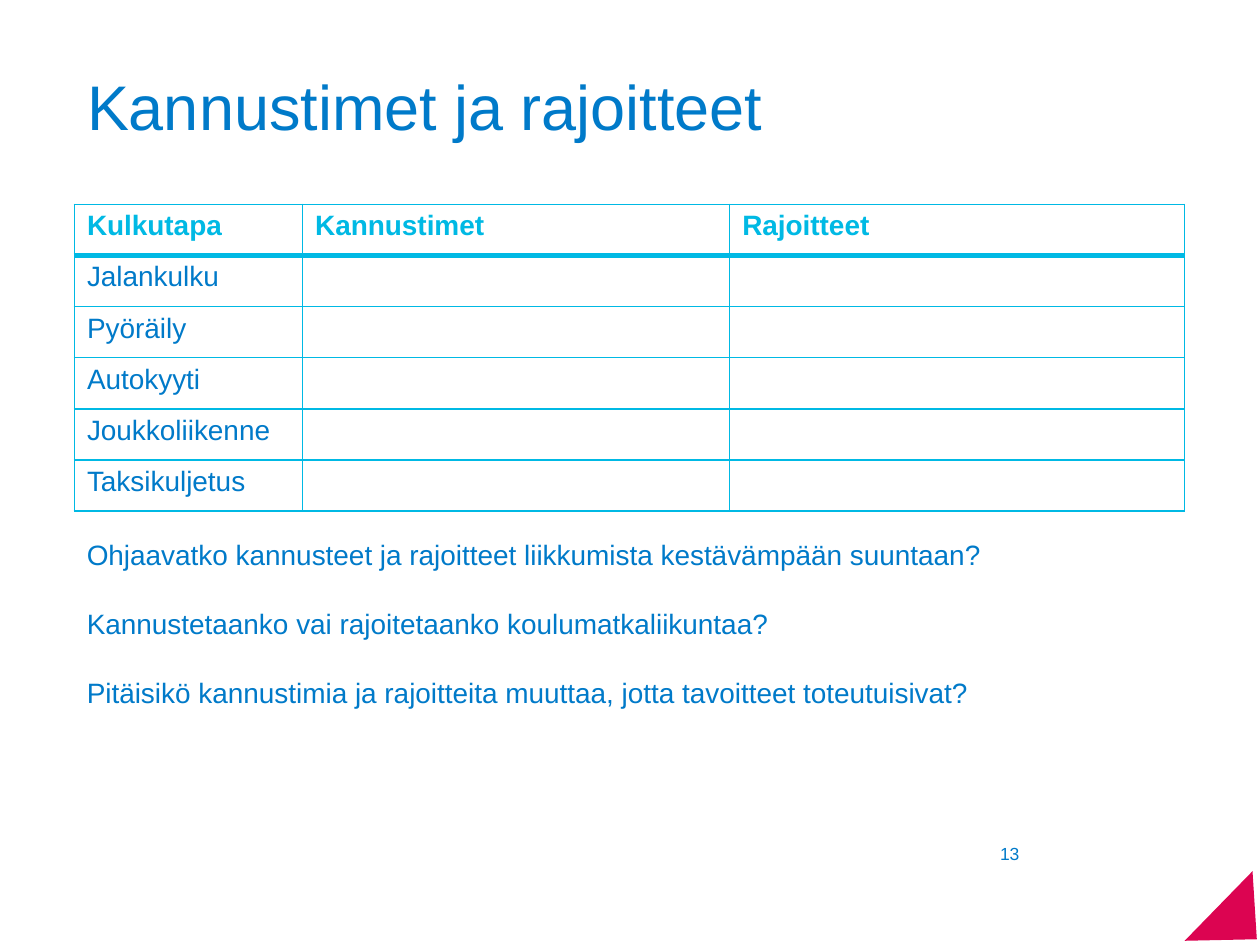
from lxml import etree
from pptx import Presentation
from pptx import util as u
from pptx.dml.color import RGBColor
from pptx.enum import shapes, text
from pptx.oxml.ns import qn

COLORS = {"blue": "007AC9", "cyan": "00B9E4", "red": "DC0451"}


def write(p, content, size, color="blue", bold=False):
    r = p.add_run()
    r.text = content
    fmt = {"name": "Arial", "size": u.Pt(size), "bold": bold}
    for name, value in fmt.items():
        setattr(r.font, name, value)
    r.font.color.rgb = RGBColor.from_string(COLORS[color])
    p.alignment = text.PP_ALIGN.LEFT


def set_borders(cell, widths):
    """Draw cyan cell borders; widths are points keyed by side L, R, T, B."""
    tc_pr = cell._tc.get_or_add_tcPr()
    for i, (side, width) in enumerate(widths.items()):
        ln = etree.Element(qn(f"a:ln{side}"), w=str(u.Pt(width)))
        fill = etree.SubElement(ln, qn("a:solidFill"))
        etree.SubElement(fill, qn("a:srgbClr"), val=COLORS["cyan"])
        tc_pr.insert(i, ln)


prs = Presentation()
prs.slide_width, prs.slide_height = u.Cm(25.4), u.Cm(19.05)
s = prs.slides.add_slide(prs.slide_layouts[5])

# Title
title = s.shapes.title
box = {"left": 1.5, "top": 0.71, "width": 22.38, "height": 3}
for name, value in box.items():
    setattr(title, name, u.Cm(value))
tf = title.text_frame
tf.auto_size = text.MSO_AUTO_SIZE.NONE
tf.vertical_anchor = text.MSO_ANCHOR.MIDDLE
tf.paragraphs[0].line_spacing = 0.9
write(tf.paragraphs[0], "Kannustimet ja rajoitteet", 36)

# Table of travel modes
headers = ["Kulkutapa", "Kannustimet", "Rajoitteet"]
modes = ["Jalankulku", "Pyöräily", "Autokyyti", "Joukkoliikenne", "Taksikuljetus"]
rows = [headers] + [[mode, "", ""] for mode in modes]
row_height = 1.03
table = s.shapes.add_table(len(rows), len(headers), u.Cm(1.5), u.Cm(4.12),
                           u.Cm(22.38), u.Cm(row_height * len(rows))).table
table.horz_banding = False
for column, width in zip(table.columns, [4.6, 8.61, 9.17]):
    column.width = u.Cm(width)
for i, row in enumerate(rows):
    table.rows[i].height = u.Cm(row_height)
    for j, content in enumerate(row):
        cell = table.cell(i, j)
        cell.fill.background()
        set_borders(cell, {"L": 1, "R": 1, "T": 3 if i == 1 else 1,
                           "B": 3 if i == 0 else 1})
        if content:
            write(cell.text_frame.paragraphs[0], content, 16,
                  "cyan" if i == 0 else "blue", i == 0)

# Discussion questions
questions = [
    "Ohjaavatko kannusteet ja rajoitteet liikkumista kestävämpään suuntaan?",
    "Kannustetaanko vai rajoitetaanko koulumatkaliikuntaa?",
    "Pitäisikö kannustimia ja rajoitteita muuttaa, jotta tavoitteet toteutuisivat?",
]
tf = s.shapes.add_textbox(u.Cm(1.5), u.Cm(10.72), u.Cm(22.4), u.Cm(3.76)).text_frame
tf.word_wrap = True
for i, question in enumerate(questions):
    p = tf.add_paragraph() if i else tf.paragraphs[0]
    if i:
        p.space_before = u.Pt(20)
    write(p, question, 16)

# Page number
tf = s.shapes.add_textbox(u.Cm(19.91), u.Cm(16.92), u.Cm(1.4), u.Cm(0.58)).text_frame
tf.word_wrap = True
tf.paragraphs[0].line_spacing = 0.9
write(tf.paragraphs[0], "13", 10)

# Corner triangle
corner = s.shapes.add_shape(shapes.MSO_SHAPE.ISOSCELES_TRIANGLE,
                            u.Cm(23.95), u.Cm(18.11), u.Cm(1.96), u.Cm(1.02))
corner.adjustments[0] = 0.47
corner.rotation = 134.3
corner.shadow.inherit = False
corner.fill.solid()
corner.fill.fore_color.rgb = RGBColor.from_string(COLORS["red"])
corner.line.fill.background()

prs.save("out.pptx")
